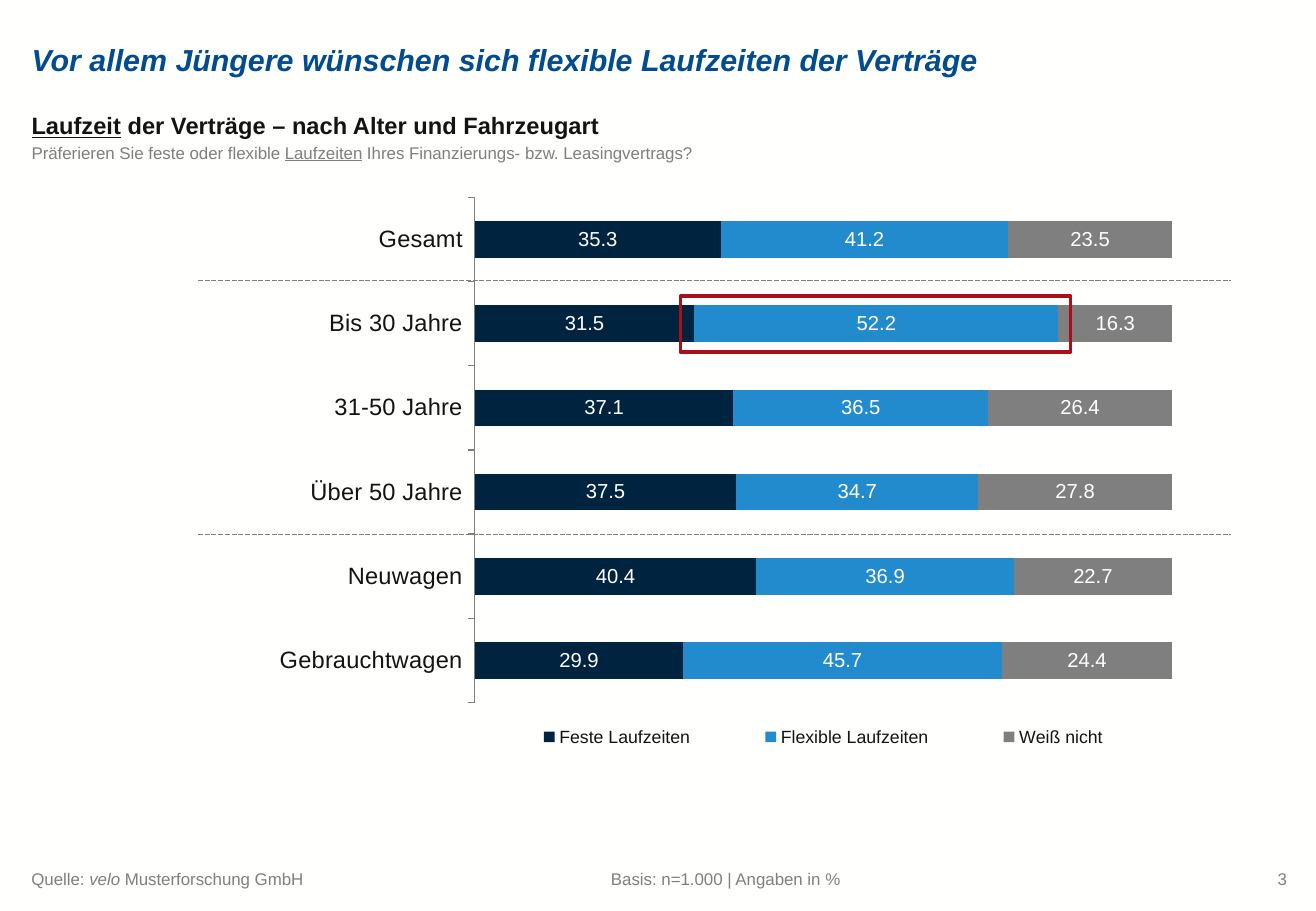
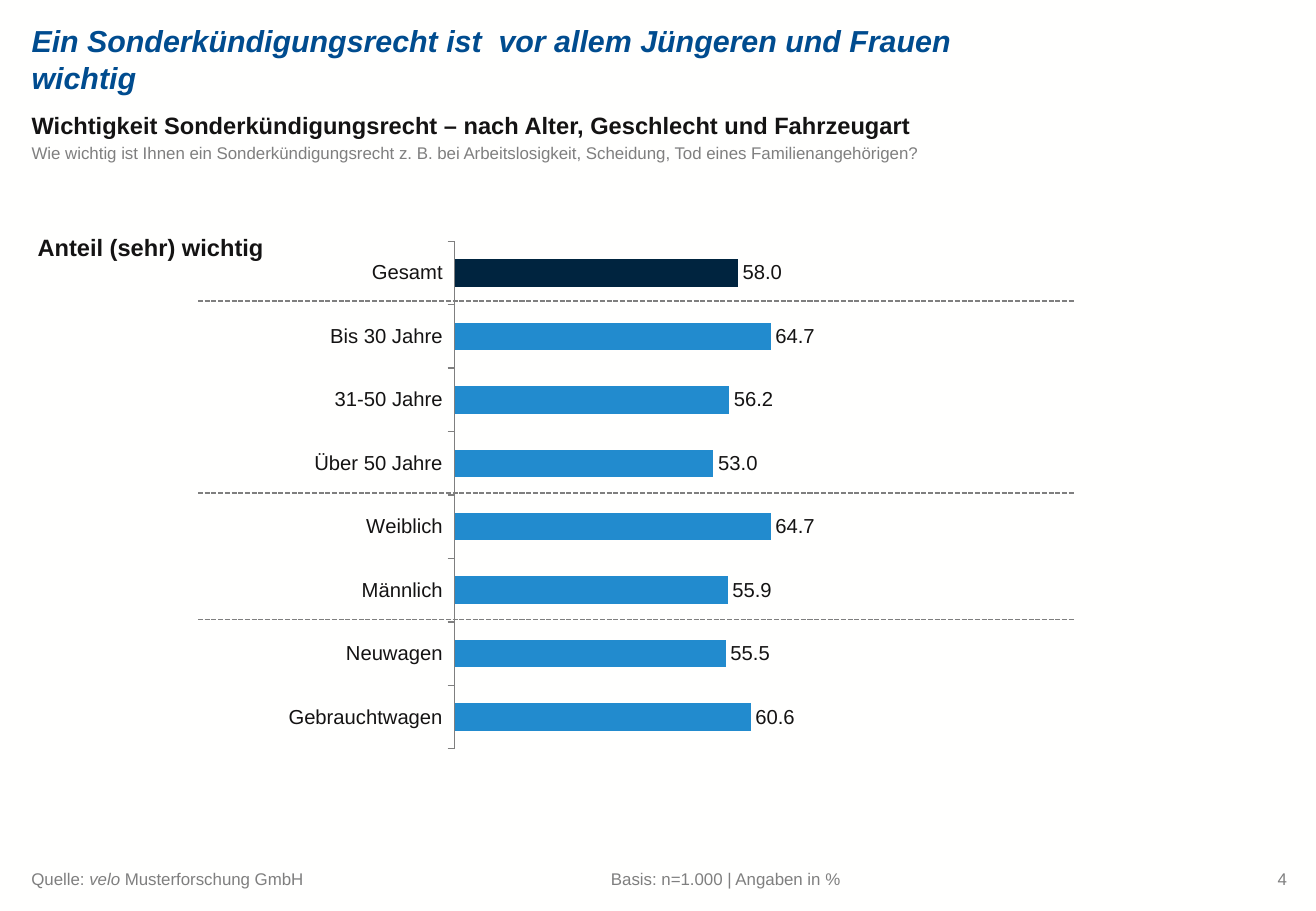
from lxml.etree import SubElement
from pptx import Presentation
from pptx.chart.data import CategoryChartData
from pptx.dml.color import RGBColor
from pptx.enum.chart import XL_CHART_TYPE as ChartType
from pptx.enum.chart import XL_LABEL_POSITION as LabelPosition
from pptx.enum.chart import XL_LEGEND_POSITION as LegendPosition
from pptx.enum.chart import XL_TICK_LABEL_POSITION as TickLabels
from pptx.enum.chart import XL_TICK_MARK as TickMark
from pptx.enum.dml import MSO_LINE as Dash
from pptx.enum.shapes import MSO_CONNECTOR as Connector
from pptx.enum.shapes import MSO_SHAPE as Shape
from pptx.enum.text import MSO_ANCHOR as Anchor
from pptx.enum.text import MSO_AUTO_SIZE as AutoSize
from pptx.enum.text import PP_ALIGN as Align
from pptx.oxml.ns import qn
from pptx.util import Inches, Pt

PAPER = RGBColor(0xFF, 0xFF, 0xFE)
INK = RGBColor(0x14, 0x13, 0x13)
TITLE_BLUE = RGBColor(0x00, 0x4C, 0x8F)
NAVY = RGBColor(0x00, 0x24, 0x3F)
BLUE = RGBColor(0x22, 0x8B, 0xCE)
GREY = RGBColor(0x7F, 0x7F, 0x7F)
RED = RGBColor(0xAB, 0x0F, 0x17)

FONT = "Arial"
LEFT = 2.4
TEXT_WIDTH = 95.3
LINE_START = 15.05
NO_INSETS = (0, 0, 0, 0)
DEFAULT_INSETS = (0.1, 0.05, 0.1, 0.05)
AGES = ["Bis 30 Jahre", "31-50 Jahre", "Über 50 Jahre"]
VEHICLES = ["Neuwagen", "Gebrauchtwagen"]


def apply(target, formats):
    for name, value in formats.items():
        setattr(target, name, value)


def format_font(font, size, color, **formats):
    apply(font, {"name": FONT, "size": Pt(size), **formats})
    font.color.rgb = color


def set_layout(parent, index, area, inner=False):
    for old in parent.findall(qn("c:layout")):
        parent.remove(old)
    layout = SubElement(parent, qn("c:layout"))
    manual = SubElement(layout, qn("c:manualLayout"))
    settings = [("layoutTarget", "inner")] if inner else []
    settings += [("xMode", "edge"), ("yMode", "edge"), *zip("xywh", area)]
    for name, value in settings:
        SubElement(manual, qn(f"c:{name}")).set("val", str(value))
    parent.insert(index, layout)


class Report:
    def __init__(self):
        self.deck = Presentation()
        apply(self.deck, {"slide_width": Inches(10.83), "slide_height": Inches(7.5)})
        background = self.deck.slide_master.background.fill
        background.solid()
        background.fore_color.rgb = PAPER
        self.page = None

    def across(self, share):
        return round(self.deck.slide_width * share / 100)

    def down(self, share):
        return round(self.deck.slide_height * share / 100)

    def area(self, left, top, width, height):
        return self.across(left), self.down(top), self.across(width), self.down(height)

    def start(self, number, title, headline, question):
        self.page = self.deck.slides.add_slide(self.deck.slide_layouts[5])
        box = self.page.shapes.title
        places = self.area(LEFT, 2.4, 75, 8.13)
        apply(box, dict(zip(("left", "top", "width", "height"), places)))
        self.fill_text(box, [(title, {})], 18, TITLE_BLUE, Anchor.MIDDLE,
                       (0, 0.05, 0.1, 0.05), bold=True, italic=True)
        self.text((LEFT, 11.87, TEXT_WIDTH, 3.73), headline, 14, INK,
                  Anchor.MIDDLE, NO_INSETS, bold=True)
        self.text((LEFT, 15.6, TEXT_WIDTH, 3.73), question, 10, GREY,
                  insets=NO_INSETS)
        self.text((1.48, 94.67, 46.08, 3.6),
                  [("Quelle: ", {}), ("velo ", {"italic": True}),
                   ("Musterforschung GmbH", {})], 10, GREY, Anchor.BOTTOM)
        self.text((45.52, 91.73, 27.33, 6.53),
                  [("Basis: n=1.000 | Angaben in %", {})], 10, GREY, Anchor.BOTTOM)
        self.text((79.59, 94.67, 19.11, 3.6), [(str(number), {})], 10, GREY,
                  align=Align.RIGHT)

    def text(self, place, spans, size, color, anchor=Anchor.TOP,
             insets=DEFAULT_INSETS, align=Align.LEFT, **formats):
        box = self.page.shapes.add_textbox(*self.area(*place))
        self.fill_text(box, spans, size, color, anchor, insets, align, **formats)

    def fill_text(self, box, spans, size, color, anchor, insets,
                  align=Align.LEFT, **formats):
        frame = box.text_frame
        sides = ("margin_left", "margin_top", "margin_right", "margin_bottom")
        apply(frame, {"word_wrap": True, "auto_size": AutoSize.NONE,
                      "vertical_anchor": anchor,
                      **dict(zip(sides, map(Inches, insets)))})
        para = frame.paragraphs[0]
        para.alignment = align
        for words, extra in spans:
            span = para.add_run()
            span.text = words
            format_font(span.font, size, color, **{**formats, **extra})

    def chart(self, kind, place, plot_area, categories, series, axis_size, scale,
              label_color, label_position=None):
        data = CategoryChartData(number_format="0.0")
        data.categories = categories
        for name, values, _ in series:
            data.add_series(name, values)
        frame = self.page.shapes.add_chart(kind, *self.area(*place), data)
        chart = frame.chart
        apply(chart, {"has_title": False, "has_legend": False})
        format_font(chart.font, 18, INK)
        set_layout(chart.element.find(f".//{qn('c:plotArea')}"), 0, plot_area, True)

        axis = chart.category_axis
        apply(axis, {"reverse_order": True, "major_tick_mark": TickMark.OUTSIDE,
                     "minor_tick_mark": TickMark.NONE,
                     "tick_label_position": TickLabels.LOW,
                     "has_major_gridlines": False})
        format_font(axis.tick_labels.font, axis_size, INK)
        apply(axis.format.line, {"width": Pt(0.75)})
        axis.format.line.color.rgb = GREY
        apply(chart.value_axis, {"visible": False, "has_major_gridlines": False,
                                 "minimum_scale": 0, **scale})

        plot = chart.plots[0]
        apply(plot, {"gap_width": 130, "vary_by_categories": False})
        for bars, (_, _, color) in zip(plot.series, series):
            bars.invert_if_negative = False
            self.paint(bars, color)
            labels = bars.data_labels
            apply(labels, {"show_value": True, "number_format": "0.0",
                           "number_format_is_linked": False})
            if label_position is not None:
                labels.position = label_position
            format_font(labels.font, 12, label_color)
        return chart

    def legend(self, chart, area):
        chart.has_legend = True
        apply(chart.legend, {"position": LegendPosition.BOTTOM,
                             "include_in_layout": False})
        format_font(chart.legend.font, 10.5, INK)
        set_layout(chart.element.find(f".//{qn('c:legend')}"), 1, area)

    def paint(self, bars, color):
        bars.format.fill.solid()
        bars.format.fill.fore_color.rgb = color

    def separators(self, end, heights):
        for height in heights:
            line = self.page.shapes.add_connector(
                Connector.STRAIGHT, self.across(LINE_START), self.down(height),
                self.across(end), self.down(height))
            line.line.color.rgb = GREY
            apply(line.line, {"width": Pt(1), "dash_style": Dash.SQUARE_DOT})
            SubElement(line.element.spPr, qn("a:effectLst"))

    def highlight(self, place):
        frame = self.page.shapes.add_shape(Shape.RECTANGLE, *self.area(*place))
        frame.shadow.inherit = False
        frame.fill.background()
        frame.line.color.rgb = RED
        frame.line.width = Pt(2.25)


def add_contract_terms(report):
    underlined = {"underline": True}
    report.start(
        3, "Vor allem Jüngere wünschen sich flexible Laufzeiten der Verträge",
        [("Laufzeit", underlined),
         (" der Verträge – nach Alter und Fahrzeugart", {})],
        [("Präferieren Sie feste oder flexible ", {}), ("Laufzeiten", underlined),
         (" Ihres Finanzierungs- bzw. Leasingvertrags?", {})])
    chart = report.chart(
        ChartType.BAR_STACKED_100, (4.8, 19.47, 95.66, 68.4),
        (0.327, 0.032, 0.554, 0.811), ["Gesamt", *AGES, *VEHICLES],
        [("Feste Laufzeiten", (35.3, 31.5, 37.1, 37.5, 40.4, 29.9), NAVY),
         ("Flexible Laufzeiten", (41.2, 52.2, 36.5, 34.7, 36.9, 45.7), BLUE),
         ("Weiß nicht", (23.5, 16.3, 26.4, 27.8, 22.7, 24.4), GREY)],
        14, {"maximum_scale": 1}, PAPER)
    chart.plots[0].overlap = 100
    report.legend(chart, (0.327, 0.863, 0.554, 0.07))
    report.separators(93.54, (30.8, 58.67))
    report.highlight((51.71, 32.53, 29.64, 6.13))


def add_special_termination(report):
    report.start(
        4, "Ein Sonderkündigungsrecht ist  vor allem Jüngeren und Frauen wichtig",
        [("Wichtigkeit Sonderkündigungsrecht – nach Alter, Geschlecht und "
          "Fahrzeugart", {})],
        [("Wie wichtig ist Ihnen ein Sonderkündigungsrecht z. B. bei "
          "Arbeitslosigkeit, Scheidung, Tod eines Familienangehörigen?", {})])
    chart = report.chart(
        ChartType.BAR_CLUSTERED, (1.75, 25.47, 98.52, 67.47),
        (0.333, 0.015, 0.565, 0.826),
        ["Gesamt", *AGES, "Weiblich", "Männlich", *VEHICLES],
        [("Anteil (sehr) wichtig",
          (58, 64.7, 56.2, 53, 64.7, 55.9, 55.5, 60.6), BLUE)],
        12, {"maximum_scale": 150, "major_unit": 20}, INK, LabelPosition.OUTSIDE_END)
    report.paint(chart.plots[0].series[0].points[0], NAVY)
    report.text((1.94, 24.93, 21, 4.53), [("Anteil (sehr) wichtig", {})], 14, INK,
                bold=True)
    report.separators(81.62, (33.07, 54.13, 68))


def main():
    report = Report()
    add_contract_terms(report)
    add_special_termination(report)
    report.deck.save("out.pptx")


if __name__ == "__main__":
    main()
